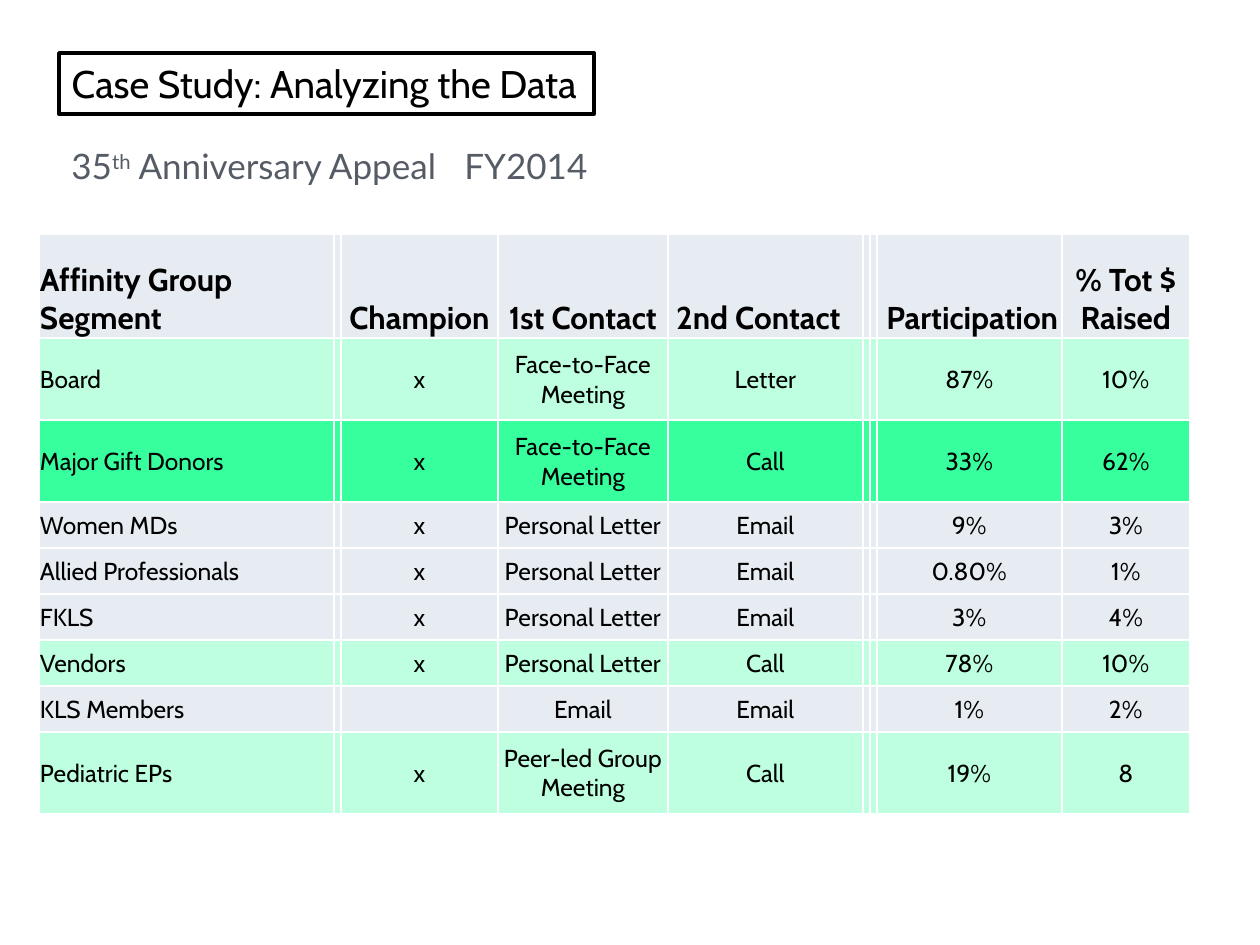
from dataclasses import dataclass

from lxml import etree
from pptx import Presentation
from pptx import util as u
from pptx.dml.color import RGBColor
from pptx.enum import text
from pptx.oxml.ns import qn

SCALE = 914400 // 126  # EMU in one px


@dataclass(frozen=True)
class Theme:
    head: str = "Cabin"
    body: str = "Lato"
    ink: str = "000000"
    muted: str = "565C66"
    white: str = "FFFFFF"
    plain: str = "E7ECF2"
    light: str = "BDFFDE"
    strong: str = "38FF9D"
    title: int = 22
    sub: int = 20
    label: int = 18
    cell: int = 14


T = Theme()
COLS = [295, 7, 157, 170, 195, 7, 7, 185, 128]
FILLED = [0, 2, 3, 4, 7, 8]  # the other columns are thin spacers
HEAD = ["Affinity Group Segment", "Champion", "1st Contact",
        "2nd Contact", "Participation", "% Tot $ Raised"]
TALL, LOW = 82, 46
# row height, fill, values
ROWS = [
    (104, T.plain, HEAD),
    (TALL, T.light, ["Board", "x", "Face-to-Face Meeting", "Letter", "87%", "10%"]),
    (TALL, T.strong, ["Major Gift Donors", "x", "Face-to-Face Meeting", "Call", "33%", "62%"]),
    (LOW, T.plain, ["Women MDs", "x", "Personal Letter", "Email", "9%", "3%"]),
    (LOW, T.plain, ["Allied Professionals", "x", "Personal Letter", "Email", "0.80%", "1%"]),
    (LOW, T.plain, ["FKLS", "x", "Personal Letter", "Email", "3%", "4%"]),
    (LOW, T.light, ["Vendors", "x", "Personal Letter", "Call", "78%", "10%"]),
    (LOW, T.plain, ["KLS Members", "", "Email", "Email", "1%", "2%"]),
    (TALL, T.light, ["Pediatric EPs", "x", "Peer-led Group Meeting", "Call", "19%", "8"]),
]


def px(n):
    return u.Emu(n * SCALE)


def rgb(code):
    return RGBColor.from_string(code)


def style(font, name, size, color, bold=False):
    font.name, font.size, font.bold = name, u.Pt(size), bold
    font.color.rgb = rgb(color)


def add_title(slide, box):
    shape = slide.shapes.title
    shape.left, shape.top, shape.width, shape.height = map(px, box)
    shape.fill.solid()
    shape.fill.fore_color.rgb = rgb(T.white)
    shape.line.color.rgb = rgb(T.ink)
    shape.line.width = u.Pt(2)
    frame = shape.text_frame
    frame.text = "Case Study: Analyzing the Data"
    frame.word_wrap = True
    frame.auto_size = text.MSO_AUTO_SIZE.NONE
    frame.vertical_anchor = text.MSO_ANCHOR.MIDDLE
    para = frame.paragraphs[0]
    para.alignment = text.PP_ALIGN.LEFT
    style(para.font, T.head, T.title, T.ink)


def add_sub(slide, box):
    frame = slide.shapes.add_textbox(*map(px, box)).text_frame
    frame.word_wrap = True
    para = frame.paragraphs[0]
    para.line_spacing = 1.09
    para.space_before = para.space_after = u.Pt(8)
    # Tab stop that sets the year apart
    tabs = etree.SubElement(para._p.get_or_add_pPr(), qn("a:tabLst"))
    etree.SubElement(tabs, qn("a:tab"), pos=str(px(393)), algn="l")
    style(para.font, T.body, T.sub, T.muted)
    for part in ("35", "th", " Anniversary Appeal\tFY2014"):
        run = para.add_run()
        run.text = part
        if part == "th":
            run.font._element.set("baseline", "30000")


def add_edges(cell):
    props = cell._tc.get_or_add_tcPr()
    for side in ("lnL", "lnR", "lnT", "lnB"):
        line = etree.SubElement(props, qn("a:" + side), w=str(u.Pt(1)))
        fill = etree.SubElement(line, qn("a:solidFill"))
        etree.SubElement(fill, qn("a:srgbClr"), val=T.white)


def fill_cell(cell, value, fill, head, first):
    add_edges(cell)
    cell.fill.solid()
    cell.fill.fore_color.rgb = rgb(fill)
    cell.margin_left = cell.margin_right = cell.margin_top = px(1)
    cell.margin_bottom = 0
    anchor = text.MSO_ANCHOR
    cell.vertical_anchor = anchor.BOTTOM if head else anchor.MIDDLE
    cell.text = value
    para = cell.text_frame.paragraphs[0]
    align = text.PP_ALIGN
    para.alignment = align.LEFT if first else align.CENTER
    style(para.font, T.head, T.label if head else T.cell, T.ink, head)


def add_grid(slide, box):
    frame = slide.shapes.add_table(len(ROWS), len(COLS), *map(px, box))
    table = frame.table
    table.horz_banding = False
    for col, width in zip(table.columns, COLS):
        col.width = px(width)
    for r, (height, fill, values) in enumerate(ROWS):
        table.rows[r].height = px(height)
        words = dict(zip(FILLED, values))
        for c in range(len(COLS)):
            fill_cell(table.cell(r, c), words.get(c, ""), fill, r == 0, c == 0)
    # Two headings sit slightly off centre
    table.cell(0, 4).margin_right = px(15)
    table.cell(0, 7).margin_left = px(7)


def main():
    deck = Presentation()
    deck.slide_width, deck.slide_height = px(1260), px(945)
    slide = deck.slides.add_slide(deck.slide_layouts[5])
    add_title(slide, (59, 53, 535, 61))
    add_sub(slide, (59, 135, 1142, 49))
    add_grid(slide, (39, 234, sum(COLS), sum(row[0] for row in ROWS)))
    deck.save("out.pptx")


if __name__ == "__main__":
    main()
